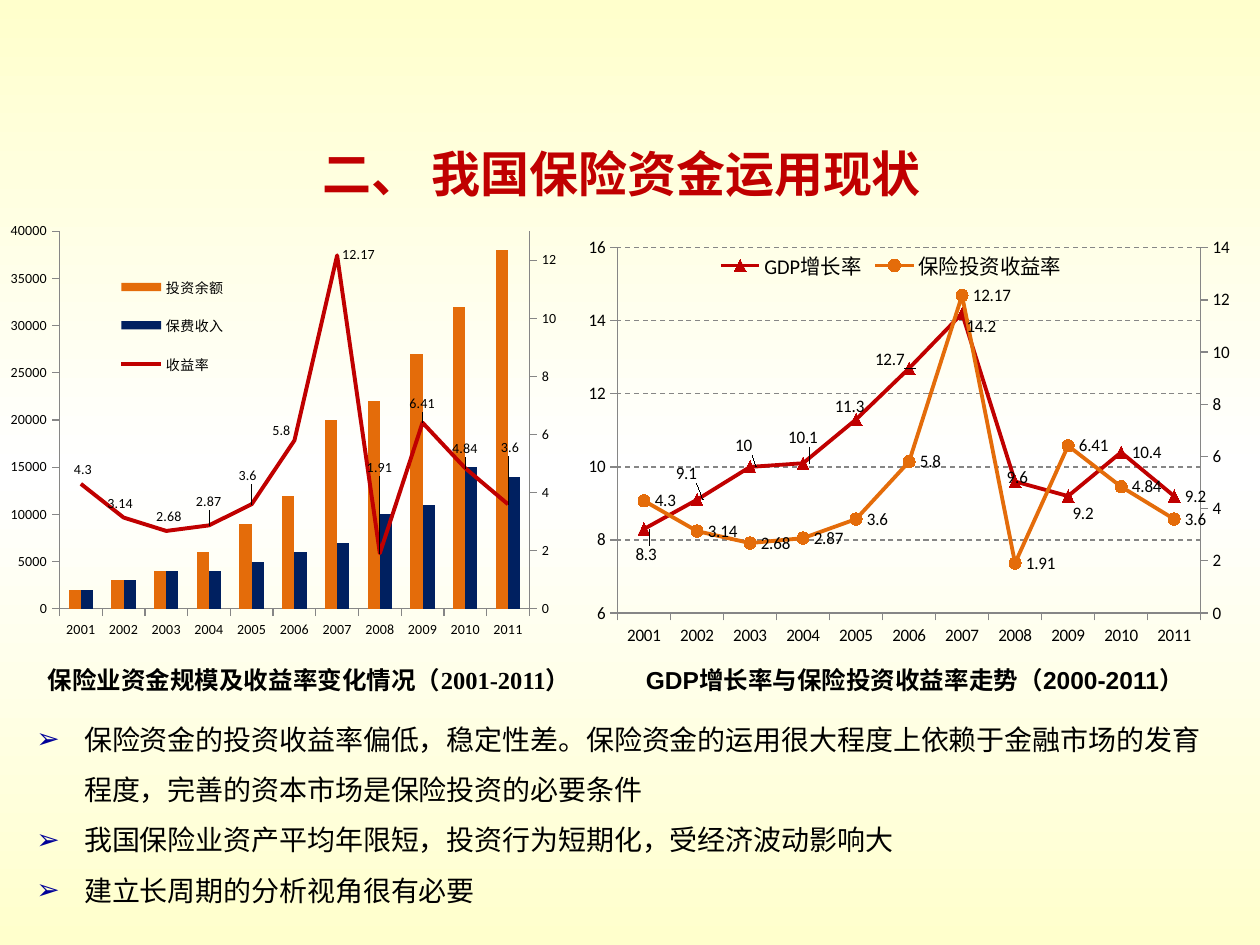
from copy import deepcopy
from dataclasses import dataclass

from pptx import Presentation, oxml
from pptx import util as u
from pptx.chart import axis as ax, data
from pptx.dml.color import RGBColor
from pptx.enum import chart as ch, dml, text as tx
from pptx.oxml.ns import nsdecls, qn


@dataclass(frozen=True)
class Theme:
    red: str = "C00000"
    gold: str = "E46C0A"
    navy: str = "002060"
    blue: str = "000099"
    ink: str = "000000"
    gray: str = "868686"
    cream: str = "FFFFCC"
    white: str = "FFFFFF"
    head: float = 28
    body: float = 16
    cap: float = 14
    key: float = 12
    note: float = 10
    tiny: float = 8
    line: float = 2.25


T = Theme()
COLS, ROWS = 100, 75
WIDE, HIGH = u.Inches(10), u.Inches(7.5)
YEARS = [str(y) for y in range(2001, 2012)]
RATE = [4.3, 3.14, 2.68, 2.87, 3.6, 5.8, 12.17, 1.91, 6.41, 4.84, 3.6]
GDP = [8.3, 9.1, 10, 10.1, 11.3, 12.7, 14.2, 9.6, 9.2, 10.4, 9.2]
FUNDS = [2000, 3000, 4000, 6000, 9000, 12000, 20000, 22000, 27000, 32000, 38000]
FEES = [2000, 3000, 4000, 4000, 5000, 6000, 7000, 10000, 11000, 15000, 14000]
# Label shifts by point, as shares of the chart's width and height
RATE_OFF = {0: (-.02, -.03), 1: (-.035, -.03), 2: (-.025, -.03), 3: (-.03, -.05),
            4: (-.03, -.06), 5: (-.045, -.02), 7: (-.03, -.18), 8: (-.03, -.04),
            9: (-.03, -.04), 10: (-.02, -.12)}
GDP_OFF = {0: (-.03, .06), 1: (-.05, -.06), 2: (-.04, -.05), 3: (-.04, -.06),
           4: (-.05, -.03), 5: (-.07, -.02), 6: (-.01, .03), 7: (-.03, -.01),
           8: (-.01, .04)}


def rgb(tone):
    return RGBColor.from_string(tone)


def grid(col, row, cols, rows):
    return [int(v) for v in (WIDE * col / COLS, HIGH * row / ROWS,
                             WIDE * cols / COLS, HIGH * rows / ROWS)]


def xml(tag, inner, **attrs):
    pairs = "".join(f' {k}="{v}"' for k, v in attrs.items())
    space = nsdecls(tag.split(":")[0])
    return oxml.parse_xml(f"<{tag} {space}{pairs}>{inner}</{tag}>")


def write(slide, lines, place, size, font="Arial", tone=T.ink, bold=False,
          align=None, anchor=None, bullet=None, space=None):
    """Put paragraphs in a text box."""
    frame = slide.shapes.add_textbox(*grid(*place)).text_frame
    frame.word_wrap = True
    if anchor:
        frame.vertical_anchor = anchor
    for i, line in enumerate(lines):
        para = frame.add_paragraph() if i else frame.paragraphs[0]
        if bullet:
            props = para._p.get_or_add_pPr()
            props.set("marL", str(u.Inches(.88)))
            props.set("indent", str(u.Inches(-.38)))
            props.append(xml("a:buClr", f'<a:srgbClr val="{T.blue}"/>'))
            props.append(xml("a:buFont", "", typeface=font))
            props.append(xml("a:buChar", "", char=bullet))
        if align:
            para.alignment = align
        if space:
            para.line_spacing = space
        run = para.add_run()
        run.text = line
        run.font.name, run.font.size, run.font.bold = font, u.Pt(size), bold
        run.font.color.rgb = rgb(tone)


def layout(**vals):
    inner = "".join(f'<c:{k} val="{v}"/>' for k, v in vals.items())
    return xml("c:layout", f"<c:manualLayout>{inner}</c:manualLayout>")


def frame_at(x, y, w, h, **extra):
    return layout(**extra, xMode="edge", yMode="edge", x=x, y=y, w=w, h=h)


def scale(axis, low=None, top=None, step=None):
    """Style an axis and set its range."""
    axis.major_tick_mark = ch.XL_TICK_MARK.OUTSIDE
    axis.minor_tick_mark = ch.XL_TICK_MARK.NONE
    axis.format.line.color.rgb = rgb(T.gray)
    if top is not None:
        axis.minimum_scale, axis.maximum_scale, axis.major_unit = low, top, step


def split(area):
    """Move the last series to a line plot on a right-hand axis."""
    last = area.xpath(".//c:ser")[-1]
    base = last.getparent()
    for old in last.findall(qn("c:invertIfNegative")):
        last.remove(old)
    plot = xml("c:lineChart", '<c:grouping val="standard"/><c:varyColors val="0"/>'
               '<c:marker val="1"/><c:axId val="701"/><c:axId val="702"/>')
    plot.insert(2, last)
    base.addnext(plot)
    mode = '<c:scaling><c:orientation val="minMax"/></c:scaling><c:delete val="{}"/>'
    cat = xml("c:catAx", '<c:axId val="701"/>' + mode.format(1) +
              '<c:axPos val="b"/><c:crossAx val="702"/>')
    val = xml("c:valAx", '<c:axId val="702"/>' + mode.format(0) +
              '<c:axPos val="r"/><c:numFmt formatCode="General" sourceLinked="0"/>'
              '<c:tickLblPos val="nextTo"/><c:crossAx val="701"/>'
              '<c:crosses val="max"/><c:crossBetween val="between"/>')
    left = area.find(qn("c:valAx"))
    left.addnext(cat)
    cat.addnext(val)
    return ax.ValueAxis(left), ax.ValueAxis(val)


def curve(ser, tone, size, mark=None, shift=None):
    """Style a line series with value labels."""
    ser.smooth = False
    ser.format.line.color.rgb = rgb(tone)
    ser.format.line.width = u.Pt(T.line)
    ser.marker.style = mark or ch.XL_MARKER_STYLE.NONE
    if mark:
        ser.marker.size = 7
        ser.marker.format.fill.solid()
        ser.marker.format.fill.fore_color.rgb = rgb(tone)
        ser.marker.format.line.color.rgb = rgb(tone)
    tags = ser.data_labels
    tags.show_value = True
    tags.position = ch.XL_LABEL_POSITION.RIGHT
    tags.font.size = u.Pt(size)
    for i, (x, y) in (shift or {}).items():
        tag = ser.points[i].data_label
        tag.font.size = u.Pt(size)
        tag.position = ch.XL_LABEL_POSITION.RIGHT
        node = tags._element.xpath(f'c:dLbl[c:idx/@val="{i}"]')[0]
        node.insert(1, layout(x=x, y=y))
    # No leader lines to the shifted labels
    tags._element.append(xml(
        "c:extLst", '<c:ext uri="{CE6537A1-D6FC-4f65-9D91-7224C49458BB}" xmlns:c15='
        '"http://schemas.microsoft.com/office/drawing/2012/chart">'
        '<c15:showLeaderLines val="0"/></c:ext>'))


def graph(slide, kind, rows, place, plot, key, size, keysize, side):
    """Add a chart whose last series uses the right-hand axis."""
    feed = data.CategoryChartData()
    feed.categories = YEARS
    for name, vals in rows:
        feed.add_series(name, vals)
    chart = slide.shapes.add_chart(kind, *grid(*place), feed).chart
    chart.has_title = False
    chart.font.name, chart.font.size = "Calibri", u.Pt(size)
    chart.font.color.rgb = rgb(T.ink)
    chart.has_legend = True
    chart.legend.position = side
    chart.legend.include_in_layout = False
    chart.legend.font.size = u.Pt(keysize)
    chart.legend._element.find(qn("c:legendPos")).addnext(frame_at(*key))
    area = chart._chartSpace.xpath(".//c:plotArea")[0]
    for old in area.findall(qn("c:layout")):
        area.remove(old)
    area.insert(0, frame_at(*plot, layoutTarget="inner"))
    chart.plots[0].vary_by_categories = False
    scale(chart.category_axis)
    return chart, *split(area)


def growth(slide):
    """GDP growth against investment yield."""
    chart, left, right = graph(
        slide, ch.XL_CHART_TYPE.LINE_MARKERS,
        [("GDP增长率", GDP), ("保险投资收益率", RATE)], (45.3, 18.7, 52.3, 34.4),
        (.073, .028, .91, .843), (.29, .07, .56, .08), T.note, T.key,
        ch.XL_LEGEND_POSITION.TOP)
    scale(left, 6, 16, 2)
    scale(right, 0, 14, 2)
    lines = left.major_gridlines.format.line
    lines.color.rgb = rgb(T.gray)
    lines.dash_style = dml.MSO_LINE.DASH
    gdp, rate = (p.series[0] for p in chart.plots)
    curve(gdp, T.red, T.note, ch.XL_MARKER_STYLE.TRIANGLE, GDP_OFF)
    curve(rate, T.gold, T.note, ch.XL_MARKER_STYLE.CIRCLE)


def assets(slide):
    """Fund size and premiums as bars, yield as a line."""
    chart, left, right = graph(
        slide, ch.XL_CHART_TYPE.COLUMN_CLUSTERED,
        [("投资余额", FUNDS), ("保费收入", FEES), ("收益率", RATE)],
        (.5, 17.2, 48, 37.5), (.088, .031, .777, .799), (.17, .09, .21, .28),
        T.tiny, T.tiny, ch.XL_LEGEND_POSITION.RIGHT)
    scale(left, 0, 40000, 5000)
    scale(right, 0, 13, 2)
    left.has_major_gridlines = False
    bars, line = chart.plots
    bars.gap_width, bars.overlap = 150, 0
    for ser, tone in zip(bars.series, (T.gold, T.navy)):
        ser.format.fill.solid()
        ser.format.fill.fore_color.rgb = rgb(tone)
    curve(line.series[0], T.red, T.tiny, shift=RATE_OFF)


def wash(slide):
    """Cream-white-cream background."""
    fill = slide.background.fill
    fill.gradient()
    fill.gradient_angle = 90
    first = fill.gradient_stops[0]._gs
    first.addnext(deepcopy(first))
    for stop, tone, spot in zip(fill.gradient_stops, (T.cream, T.white, T.cream),
                                (0, .5, 1)):
        stop.color.rgb, stop.position = rgb(tone), spot


def main():
    deck = Presentation()
    deck.slide_width, deck.slide_height = WIDE, HIGH
    slide = deck.slides.add_slide(deck.slide_layouts[6])
    mid = tx.PP_ALIGN.CENTER
    wash(slide)
    # Title
    write(slide, ["二、 我国保险资金运用现状"], (10.2, 10.9, 78.3, 5.7), T.head,
          font="Calibri", tone=T.red, bold=True, align=mid,
          anchor=tx.MSO_ANCHOR.MIDDLE)
    # Right chart and caption
    growth(slide)
    write(slide, ["GDP增长率与保险投资收益率走势（2000-2011）"],
          (48.4, 52.3, 48.4, 3.4), T.cap, bold=True, align=mid)
    # Findings
    write(slide, ["保险资金的投资收益率偏低，稳定性差。保险资金的运用很大程度上依赖于金融市场的发育程度，完善的资本市场是保险投资的必要条件",
                  "我国保险业资产平均年限短，投资行为短期化，受经济波动影响大",
                  "建立长周期的分析视角很有必要"],
          (-3.1, 55.5, 101.6, 18.8), T.body, bullet="➢", space=1.5)
    # Left chart and caption
    assets(slide)
    write(slide, ["保险业资金规模及收益率变化情况（2001-2011）"],
          (2.8, 52.3, 50, 3.4), T.cap, font="Times New Roman", bold=True)
    deck.save("out.pptx")


if __name__ == "__main__":
    main()
